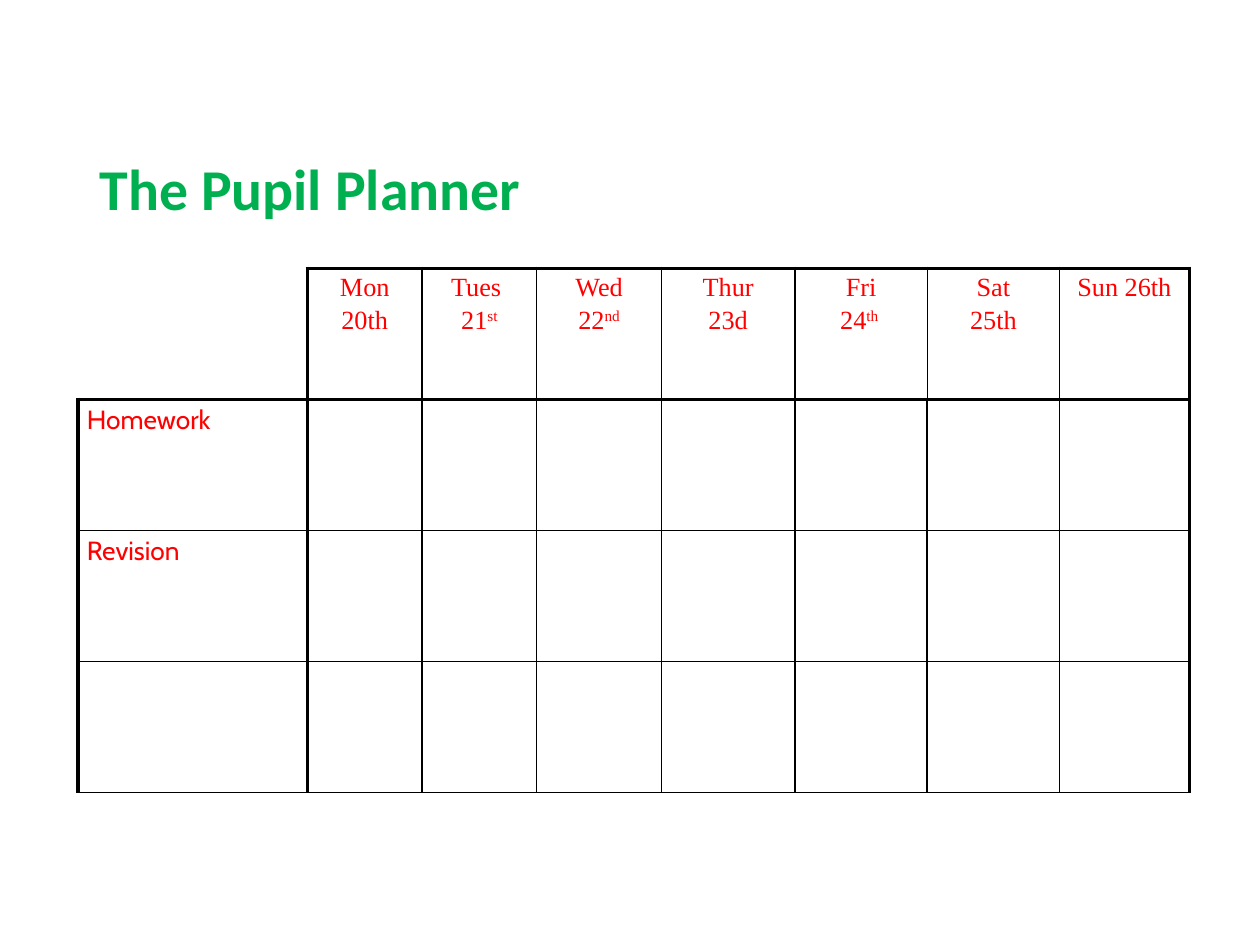
"""Build the weekly pupil planner slide with its homework and revision grid."""
from lxml import etree
from pptx import Presentation
from pptx.dml.color import RGBColor
from pptx.enum import text
from pptx.oxml import ns
from pptx.util import Inches, Pt

GREEN = RGBColor(0x00, 0xB0, 0x50)
RED = RGBColor(0xFF, 0x00, 0x00)
BLACK = RGBColor(0x00, 0x00, 0x00)

TITLE = "The Pupil Planner"
DAYS = [
    ("Mon", "20th", ""),
    ("Tues ", "21", "st"),
    ("Wed", "22", "nd"),
    ("Thur", "23d", ""),
    ("Fri", "24", "th "),
    ("Sat", "25th", ""),
    ("Sun 26th", "", ""),
]
TASKS = ["Homework", "Revision", ""]
COLUMN_WIDTHS = [1.82, 0.91, 0.91, 0.99, 1.06, 1.05, 1.05, 1.03]
ROW_HEIGHT = 1.04
THICK, MEDIUM, THIN = 2.25, 1, 0.75


def style_span(span, font_name):
    span.font.name = font_name
    span.font.size = Pt(15)
    span.font.color.rgb = RED


def add_border(cell, side, width):
    properties = cell._tc.get_or_add_tcPr()
    line = etree.SubElement(properties, ns.qn(f"a:ln{side}"), w=str(Pt(width)))
    if width:
        fill = etree.SubElement(line, ns.qn("a:solidFill"))
        etree.SubElement(fill, ns.qn("a:srgbClr"), val=str(BLACK))
    else:
        etree.SubElement(line, ns.qn("a:noFill"))


def border_widths(row, column):
    if row == column == 0:
        return {"L": 0, "R": THICK, "T": 0, "B": THICK}
    inner = THIN if row == 0 else MEDIUM
    return {
        "L": THICK if column <= 1 else inner,
        "R": THICK if column in (0, len(DAYS)) else inner,
        "T": THICK if row <= 1 else MEDIUM,
        "B": THICK if row == 0 else MEDIUM,
    }


def write_day(frame, day, date, suffix):
    frame.text = day
    if date:
        para = frame.add_paragraph()
        para.text = date
        para.space_before = Pt(2.25)
        if suffix:
            span = para.add_run()
            span.text = suffix
            span.font._element.set("baseline", "30000")
    for para in frame.paragraphs:
        para.alignment = text.PP_ALIGN.CENTER
        for span in para.runs:
            style_span(span, "Times New Roman")


def add_title(page):
    box = page.shapes.title
    box.left, box.top, box.width, box.height = map(Inches, (0.69, 1.07, 8.62, 0.9))
    frame = box.text_frame
    frame.text = TITLE
    frame.vertical_anchor = text.MSO_ANCHOR.MIDDLE
    para = frame.paragraphs[0]
    para.alignment = text.PP_ALIGN.LEFT
    para.line_spacing = 0.9
    font = para.runs[0].font
    font.name, font.size, font.bold = "Calibri", Pt(33), True
    font.color.rgb = GREEN


def add_planner(page):
    row_count = len(TASKS) + 1
    planner = page.shapes.add_table(
        row_count, len(COLUMN_WIDTHS), Inches(0.62), Inches(2.13),
        Inches(sum(COLUMN_WIDTHS)), Inches(ROW_HEIGHT * row_count)).table
    planner.first_row = planner.horz_banding = False
    for column, width in zip(planner.columns, COLUMN_WIDTHS):
        column.width = Inches(width)

    for row in range(row_count):
        planner.rows[row].height = Inches(ROW_HEIGHT)
        for column in range(len(COLUMN_WIDTHS)):
            cell = planner.cell(row, column)
            cell.margin_left = cell.margin_right = Inches(0.07)
            cell.margin_top = cell.margin_bottom = Inches(0.04)
            for side, width in border_widths(row, column).items():
                add_border(cell, side, width)
            cell.fill.background()

    for column, day in enumerate(DAYS, start=1):
        write_day(planner.cell(0, column).text_frame, *day)
    for row, task in enumerate(TASKS, start=1):
        frame = planner.cell(row, 0).text_frame
        frame.text = task
        for span in frame.paragraphs[0].runs:
            style_span(span, "Cabin")


def main():
    deck = Presentation()
    deck.slide_width, deck.slide_height = Inches(10), Inches(7.5)
    page = deck.slides.add_slide(deck.slide_layouts[5])
    add_title(page)
    add_planner(page)
    deck.save("out.pptx")


if __name__ == "__main__":
    main()
